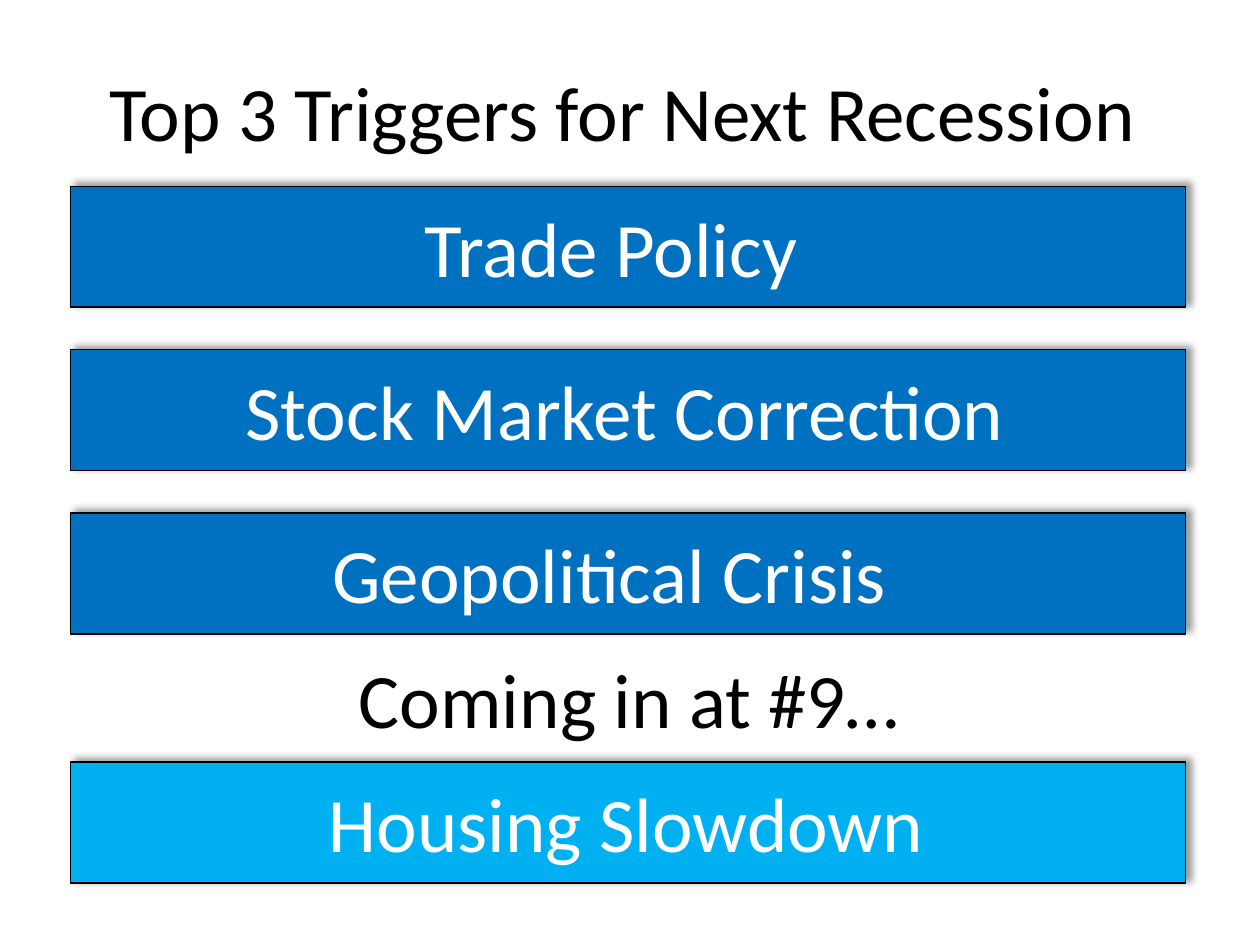
from lxml import etree
from pptx import Presentation
from pptx.dml.color import RGBColor
from pptx.enum.shapes import MSO_SHAPE
from pptx.enum.text import MSO_ANCHOR, MSO_AUTO_SIZE, PP_ALIGN
from pptx.oxml.ns import qn
from pptx.util import Inches, Pt

RECTANGLE = MSO_SHAPE.RECTANGLE
TOP = MSO_ANCHOR.TOP
FIT_SHAPE = MSO_AUTO_SIZE.SHAPE_TO_FIT_TEXT
LEFT, CENTER = PP_ALIGN.LEFT, PP_ALIGN.CENTER

COLORS = {"text": "000000", "label": "FFFFFF", "top": "0070C0",
          "housing": "00B0F0", "outline": "000000", "shadow": "000000"}
FONT = {"name": "Calibri", "size": Pt(44), "bold": False}

TITLE = "Top 3 Triggers for Next Recession "
RUNNER_UP_HEADING = "Coming in at #9…"
# label, left and width of the label
TOP_TRIGGERS = [
    ("Trade Policy", 3.27, 3.19),
    ("Stock Market Correction", 1.85, 6.29),
    ("Geopolitical Crisis", 2.54, 4.65),
]
RUNNER_UP = ("Housing Slowdown", 2.51, 4.98)

BAR_LEFT, BAR_WIDTH, BAR_HEIGHT = 0.56, 8.85, 0.96
FIRST_BAR_TOP, BAR_STEP = 1.48, 1.295
RUNNER_UP_TOP = 6.05
TEXT_HEIGHT = 0.84
LABEL_OFFSET = (BAR_HEIGHT - TEXT_HEIGHT) / 2


def rgb(name):
    return RGBColor.from_string(COLORS[name])


def write(box, text, color, align, wrap=True):
    frame = box.text_frame
    frame.text = text
    frame.word_wrap = wrap
    frame.auto_size = FIT_SHAPE
    frame.vertical_anchor = TOP
    paragraph = frame.paragraphs[0]
    paragraph.alignment = align
    font = paragraph.runs[0].font
    for attribute, value in FONT.items():
        setattr(font, attribute, value)
    font.color.rgb = rgb(color)


def add_text(slide, left, top, width, *content):
    box = slide.shapes.add_textbox(
        Inches(left), Inches(top), Inches(width), Inches(TEXT_HEIGHT))
    write(box, *content)


def cast_shadow(bar):
    """Give the bar a soft shadow towards the upper right."""
    bar.shadow.inherit = False
    effects = bar.element.spPr.find(qn("a:effectLst"))
    shadow = etree.SubElement(
        effects, qn("a:outerShdw"), blurRad=str(Pt(4)), dist=str(Pt(3)),
        dir=str(315 * 60000), algn="bl", rotWithShape="0")
    color = etree.SubElement(shadow, qn("a:srgbClr"), val=COLORS["shadow"])
    etree.SubElement(color, qn("a:alpha"), val="40000")


def add_trigger(slide, top, trigger, fill):
    bar = slide.shapes.add_shape(
        RECTANGLE, Inches(BAR_LEFT), Inches(top),
        Inches(BAR_WIDTH), Inches(BAR_HEIGHT))
    bar.fill.solid()
    bar.fill.fore_color.rgb = rgb(fill)
    bar.line.color.rgb = rgb("outline")
    bar.line.width = Pt(1)
    cast_shadow(bar)
    label, left, width = trigger
    add_text(slide, left, top + LABEL_OFFSET, width, label, "label", LEFT, False)


def main():
    deck = Presentation()
    deck.slide_width, deck.slide_height = Inches(10), Inches(7.5)
    slide = deck.slides.add_slide(deck.slide_layouts.get_by_name("Title Only"))

    title = slide.shapes.title
    title.left, title.top = Inches(0.61), Inches(0.46)
    title.width, title.height = Inches(8.8), Inches(TEXT_HEIGHT)
    write(title, TITLE, "text", CENTER)

    for rank, trigger in enumerate(TOP_TRIGGERS):
        add_trigger(slide, FIRST_BAR_TOP + rank * BAR_STEP, trigger, "top")

    add_text(slide, 0.55, 5.12, 8.89, RUNNER_UP_HEADING, "text", CENTER)
    add_trigger(slide, RUNNER_UP_TOP, RUNNER_UP, "housing")

    deck.save("out.pptx")


if __name__ == "__main__":
    main()
